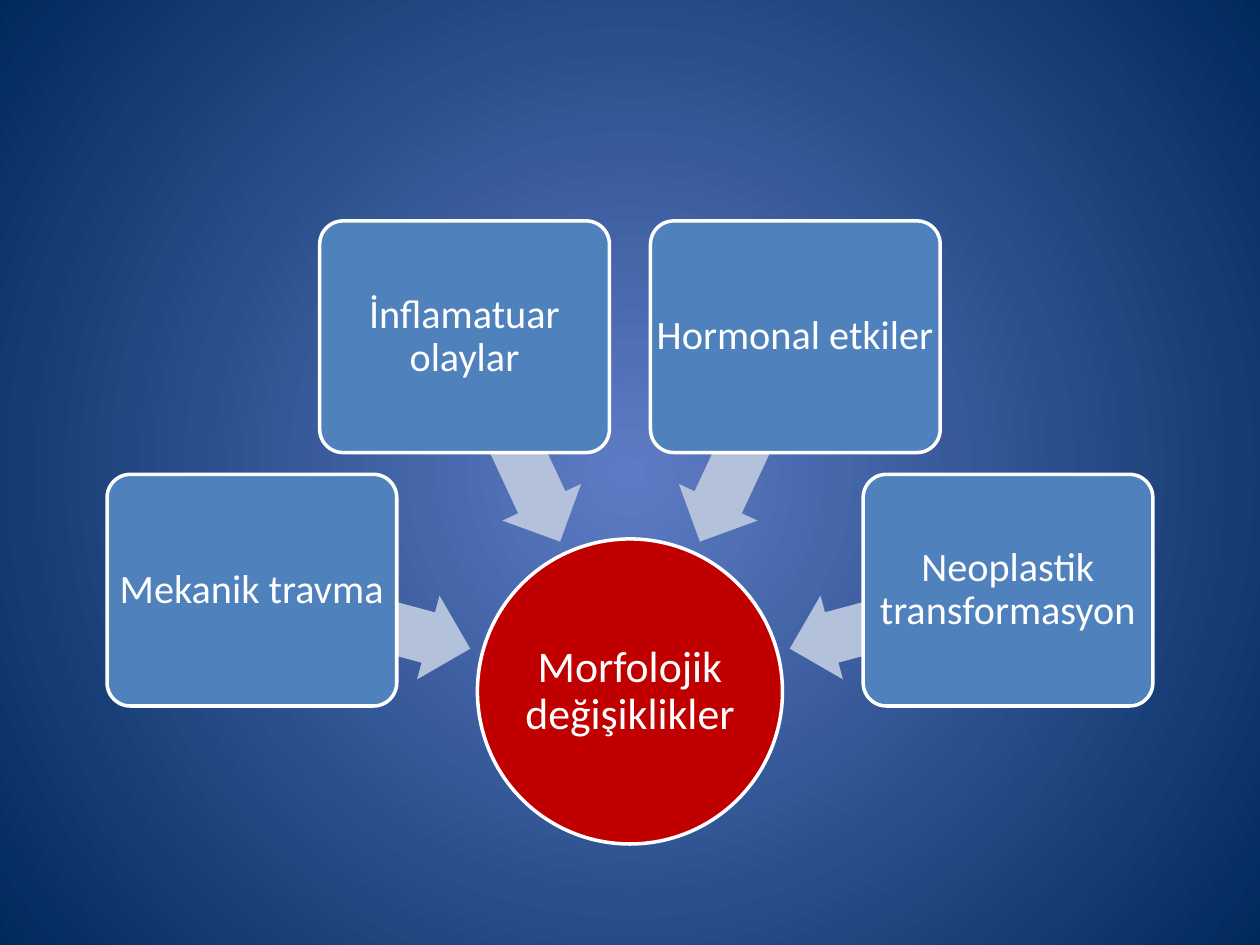
"""Build a slide of four causes that point at one hub."""
from math import cos, radians, sin

from lxml.etree import SubElement
from pptx import Presentation
from pptx.dml.color import RGBColor
from pptx.enum.shapes import MSO_SHAPE
from pptx.enum.text import MSO_ANCHOR, PP_ALIGN
from pptx.oxml.ns import qn
from pptx.util import Cm, Pt

HUB = "Morfolojik değişiklikler"
CAUSES = [
    ("Mekanik travma", False),
    ("İnflamatuar olaylar", True),
    ("Hormonal etkiler", False),
    ("Neoplastik transformasyon", True),
]
FIRST, STEP = 15, 50
MID = (12.7, 13.94)
HUB_SIZE = (6.15, 6.15)
BOX_SIZE, BOX_DIST = (5.84, 4.67), 7.89
ARROW_SIZE, ARROW_DIST = (4.57, 1.75), 5.62

WHITE = RGBColor(0xFF, 0xFF, 0xFF)
RED = RGBColor(0xC0, 0x00, 0x00)
BLUE = RGBColor(0x4F, 0x81, 0xBD)
PALE = RGBColor(0xB3, 0xC1, 0xDB)
GLOW = RGBColor(0x5E, 0x7C, 0xC5)
NAVY = RGBColor(0x00, 0x29, 0x5C)


def paint_back(slide):
    fill = slide.background.fill
    fill.gradient()
    for stop, color in zip(fill.gradient_stops, (GLOW, NAVY)):
        stop.color.rgb = color
    grad = slide.element.find(".//" + qn("a:gradFill"))
    grad.remove(grad.find(qn("a:lin")))
    round_el = SubElement(grad, qn("a:path"), {"path": "circle"})
    SubElement(round_el, qn("a:fillToRect"), dict.fromkeys("ltrb", "50000"))


def add_shape(slide, kind, mid, size, color, adjust=()):
    left, top = (m - s / 2 for m, s in zip(mid, size))
    shape = slide.shapes.add_shape(kind, *map(Cm, (left, top, *size)))
    shape.shadow.inherit = False
    shape.fill.solid()
    shape.fill.fore_color.rgb = color
    shape.line.fill.background()
    for i, value in enumerate(adjust):
        shape.adjustments[i] = value
    return shape


def add_label(shape, text, size, wrap=True):
    shape.line.color.rgb = WHITE
    shape.line.width = Pt(2)
    frame = shape.text_frame
    frame.word_wrap = wrap
    frame.vertical_anchor = MSO_ANCHOR.MIDDLE
    frame.margin_left = frame.margin_right = 0
    frame.margin_top = frame.margin_bottom = 0
    para = frame.paragraphs[0]
    para.text = text
    para.alignment = PP_ALIGN.CENTER
    para.line_spacing = 0.9
    para.font.name = "Calibri"
    para.font.size = Pt(size)
    para.font.color.rgb = WHITE


def on_arc(angle, dist):
    turn = radians(angle)
    return MID[0] - dist * cos(turn), MID[1] - dist * sin(turn)


def main():
    deck = Presentation()
    deck.slide_width, deck.slide_height = Cm(25.4), Cm(19.05)
    slide = deck.slides.add_slide(deck.slide_layouts[6])
    paint_back(slide)
    hub = add_shape(slide, MSO_SHAPE.OVAL, MID, HUB_SIZE, RED)
    add_label(hub, HUB, 25)
    for i, (text, wrap) in enumerate(CAUSES):
        angle = FIRST + i * STEP
        arrow = add_shape(slide, MSO_SHAPE.LEFT_ARROW, on_arc(angle, ARROW_DIST),
                          ARROW_SIZE, PALE, (0.6, 0.5))
        arrow.rotation = 180 + angle
        box = add_shape(slide, MSO_SHAPE.ROUNDED_RECTANGLE, on_arc(angle, BOX_DIST),
                        BOX_SIZE, BLUE, (0.1,))
        add_label(box, text, 23, wrap)
    deck.save("out.pptx")


if __name__ == "__main__":
    main()
